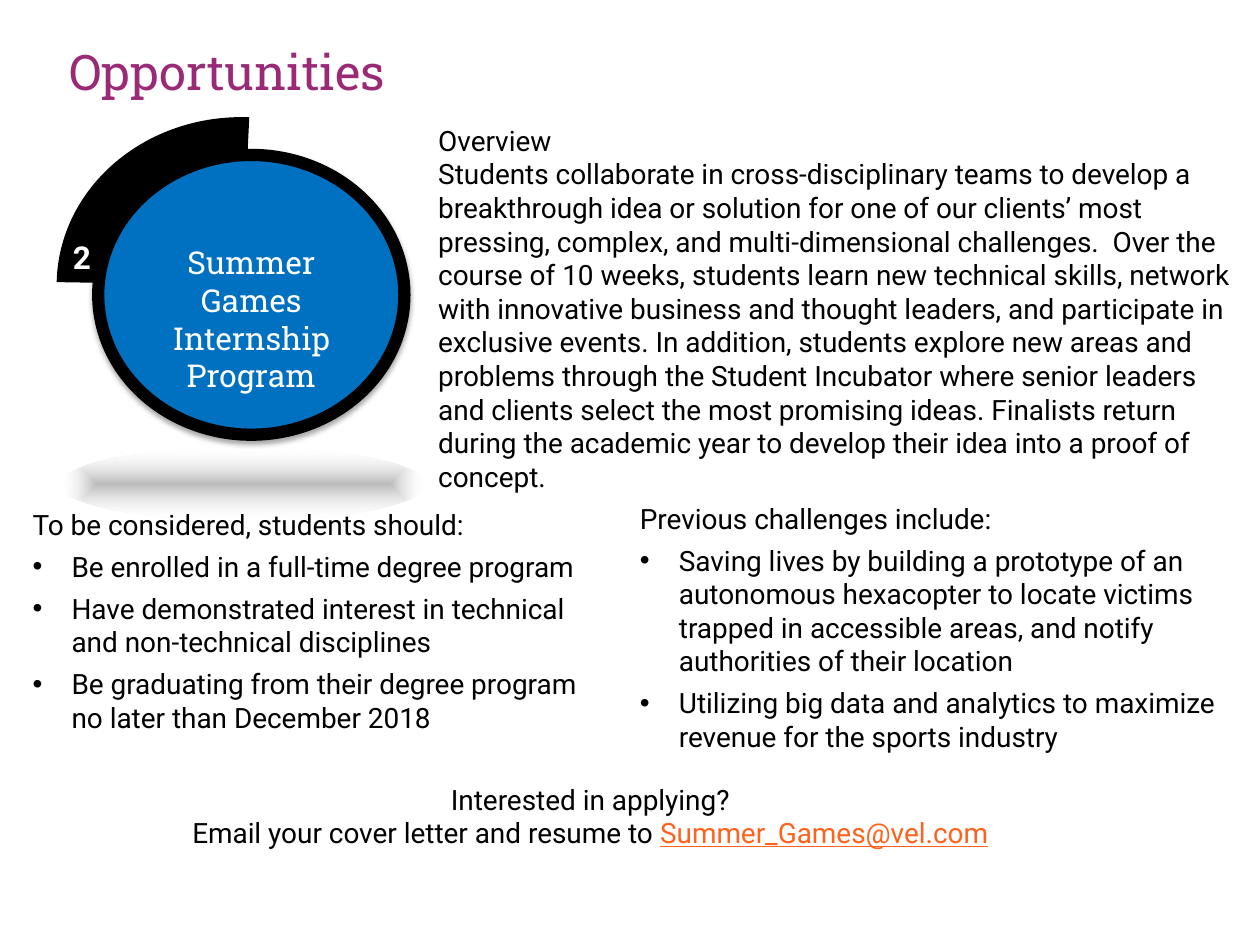
from dataclasses import dataclass

from lxml.etree import SubElement
from pptx import Presentation
from pptx.dml.color import RGBColor
from pptx.enum.shapes import MSO_SHAPE
from pptx.enum.text import MSO_ANCHOR, MSO_AUTO_SIZE, PP_ALIGN
from pptx.oxml import parse_xml
from pptx.oxml.ns import nsdecls, qn
from pptx.util import Inches, Pt

BODY_FONT = "Roboto"
HEADING_FONT = "Roboto Slab"
BLACK = "000000"
WHITE = "FFFFFF"
PURPLE = "9A2976"
BLUE = "0070C0"
ORANGE = "FF621D"


@dataclass(frozen=True)
class Area:
    left: float
    top: float
    width: float
    height: float

    def lengths(self) -> tuple:
        return tuple(Inches(side) for side in (self.left, self.top, self.width, self.height))


@dataclass(frozen=True)
class Span:
    text: str
    color: str = BLACK
    size: float = 16
    font: str = BODY_FONT
    bold: bool = False
    underline: bool = False


@dataclass(frozen=True)
class Para:
    spans: tuple[Span, ...]
    bullet: bool = False
    centered: bool = False


@dataclass(frozen=True)
class TextBlock:
    area: Area
    paras: tuple[Para, ...]


def rgb(color: str) -> RGBColor:
    return RGBColor.from_string(color)


def add_span(para, span: Span) -> None:
    run = para.add_run()
    run.text = span.text
    run.font.name = span.font
    run.font.size = Pt(span.size)
    run.font.bold = span.bold
    run.font.underline = span.underline
    run.font.color.rgb = rgb(span.color)


def add_bullet(para) -> None:
    properties = para._p.get_or_add_pPr()
    properties.set("marL", str(Inches(0.31)))
    properties.set("indent", str(-Inches(0.31)))
    SubElement(properties, qn("a:buFont")).set("typeface", "Arial")
    SubElement(properties, qn("a:buChar")).set("char", "•")
    para.space_before = Pt(4.7)


def add_text(page, block: TextBlock) -> None:
    frame = page.shapes.add_textbox(*block.area.lengths()).text_frame
    frame.word_wrap = True
    frame.auto_size = MSO_AUTO_SIZE.SHAPE_TO_FIT_TEXT
    for index, item in enumerate(block.paras):
        para = frame.paragraphs[0] if index == 0 else frame.add_paragraph()
        if item.bullet:
            add_bullet(para)
        para.alignment = PP_ALIGN.CENTER if item.centered else PP_ALIGN.LEFT
        for span in item.spans:
            add_span(para, span)


def add_shape(page, kind: MSO_SHAPE, area: Area, fill: str):
    shape = page.shapes.add_shape(kind, *area.lengths())
    shape.shadow.inherit = False
    shape.fill.solid()
    shape.fill.fore_color.rgb = rgb(fill)
    shape.line.fill.background()
    return shape


def add_title(page, area: Area, span: Span) -> None:
    title = page.shapes.title
    title.left, title.top, title.width, title.height = area.lengths()
    title.text_frame.vertical_anchor = MSO_ANCHOR.MIDDLE
    para = title.text_frame.paragraphs[0]
    para.alignment = PP_ALIGN.LEFT
    add_span(para, span)


def add_badge(page) -> None:
    arc = add_shape(page, MSO_SHAPE.BLOCK_ARC, Area(0.45, 0.93, 2.93, 2.67), BLACK)
    for index, value in enumerate((108.6, 163.65, 0.15)):
        arc.adjustments[index] = value

    disc = add_shape(page, MSO_SHAPE.OVAL, Area(0.78, 1.23, 2.43, 2.22), BLUE)
    disc.line.color.rgb = rgb(BLACK)
    disc.line.width = Pt(7)
    effects = disc._element.spPr.find(qn("a:effectLst"))
    effects.append(parse_xml(
        f'<a:outerShdw {nsdecls("a")} blurRad="{Pt(3.1)}" dist="{Pt(1.8)}" dir="5400000" rotWithShape="0">'
        f'<a:srgbClr val="{BLACK}"><a:alpha val="35000"/></a:srgbClr></a:outerShdw>'
    ))

    reflection = add_shape(page, MSO_SHAPE.OVAL, Area(0.48, 3.55, 2.9, 0.58), WHITE)
    properties = reflection._element.spPr
    properties.replace(properties.find(qn("a:solidFill")), parse_xml(
        f'<a:gradFill {nsdecls("a")} rotWithShape="1"><a:gsLst>'
        '<a:gs pos="0"><a:srgbClr val="A6A6A6"><a:alpha val="77000"/></a:srgbClr></a:gs>'
        f'<a:gs pos="100000"><a:srgbClr val="{WHITE}"><a:alpha val="0"/></a:srgbClr></a:gs>'
        '</a:gsLst><a:path path="shape">'
        '<a:fillToRect l="50000" t="50000" r="50000" b="50000"/></a:path></a:gradFill>'
    ))


def plain(text: str, bullet: bool = False, centered: bool = False) -> Para:
    return Para((Span(text),), bullet, centered)


TEXT_BLOCKS = (
    TextBlock(Area(0.48, 1.84, 0.33, 0.4), (Para((Span("2", WHITE, 18, bold=True),)),)),
    TextBlock(Area(0.98, 1.88, 2.03, 0.93), (
        Para((Span("Summer Games Internship Program", WHITE, 18, HEADING_FONT),), centered=True),
    )),
    TextBlock(Area(3.38, 0.93, 6.5, 2.79), (
        plain("Overview"),
        plain(
            "Students collaborate in cross-disciplinary teams to develop a breakthrough idea or "
            "solution for one of our clients’ most pressing, complex, and multi-dimensional "
            "challenges.  Over the course of 10 weeks, students learn new technical skills, "
            "network with innovative business and thought leaders, and participate in exclusive "
            "events. In addition, students explore new areas and problems through the Student "
            "Incubator where senior leaders and clients select the most promising ideas. "
            "Finalists return during the academic year to develop their idea into a proof of concept."
        ),
    )),
    TextBlock(Area(0.16, 3.98, 4.79, 1.92), (
        plain("To be considered, students should:"),
        plain("Be enrolled in a full-time degree program", bullet=True),
        plain("Have demonstrated interest in technical and non-technical disciplines", bullet=True),
        plain("Be graduating from their degree program no later than December 2018", bullet=True),
    )),
    TextBlock(Area(4.98, 3.93, 5.08, 2.12), (
        plain("Previous challenges include:"),
        plain(
            "Saving lives by building a prototype of an autonomous hexacopter to locate victims "
            "trapped in accessible areas, and notify authorities of their location",
            bullet=True,
        ),
        plain("Utilizing big data and analytics to maximize revenue for the sports industry", bullet=True),
    )),
    TextBlock(Area(0.96, 6.16, 7.45, 0.64), (
        plain("Interested in applying?", centered=True),
        Para((
            Span("Email your cover letter and resume to "),
            Span("Summer_Games@vel.com", ORANGE, underline=True),
        ), centered=True),
    )),
)


def main() -> None:
    deck = Presentation()
    deck.slide_width, deck.slide_height = Inches(10), Inches(7.5)
    page = deck.slides.add_slide(deck.slide_layouts[5])
    add_title(page, Area(0.45, 0.2, 9.37, 0.73), Span("Opportunities", PURPLE, 28, HEADING_FONT))
    add_badge(page)
    for block in TEXT_BLOCKS:
        add_text(page, block)
    deck.save("out.pptx")


if __name__ == "__main__":
    main()
